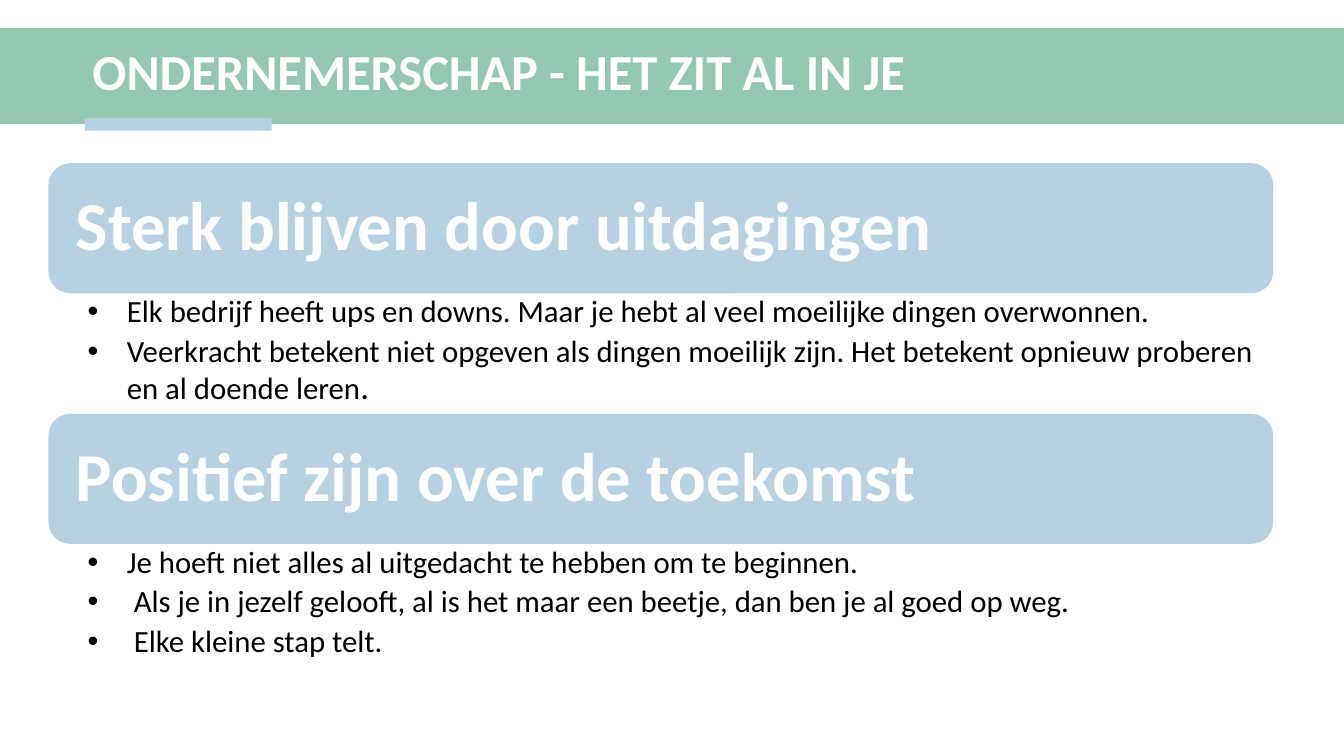
"""Build the slide on entrepreneurship with two headed bullet lists."""
from dataclasses import dataclass

from lxml.etree import SubElement
from pptx import Presentation
from pptx.dml.color import RGBColor
from pptx.enum.shapes import MSO_SHAPE
from pptx.enum.text import MSO_ANCHOR, PP_ALIGN
from pptx.oxml.ns import qn
from pptx.util import Pt

TITLE = "ONDERNEMERSCHAP - HET ZIT AL IN JE"
SECTIONS = [
    ("Sterk blijven door uitdagingen", [
        (28, ["Elk bedrijf heeft ups en downs. Maar je hebt al veel moeilijke dingen overwonnen."]),
        (28, ["Veerkracht betekent niet opgeven als dingen moeilijk zijn. "
              "Het betekent opnieuw proberen en al doende leren", "."]),
    ]),
    ("Positief zijn over de toekomst", [
        (28, ["Je hoeft niet alles al uitgedacht te hebben om te beginnen."]),
        (33, ["Als je in jezelf gelooft, al is het maar een beetje, dan ben je al goed op weg."]),
        (33, ["Elke kleine stap telt."]),
    ]),
]


@dataclass(frozen=True)
class Theme:
    """Colours and type sizes."""
    green: RGBColor = RGBColor(0x94, 0xC7, 0xB0)
    blue: RGBColor = RGBColor(0xB6, 0xD1, 0xE1)
    white: RGBColor = RGBColor(0xFF, 0xFF, 0xFF)
    black: RGBColor = RGBColor(0, 0, 0)
    font: str = "Calibri"
    title: int = 36
    heading: int = 49
    body: int = 22
    full_stop: int = 25


THEME = Theme()
CARD_LEFT, CARD_TOP, CARD_WIDTH, CARD_HEIGHT = 34.6, 116.6, 874.8, 92.9
SECTION_STEP, LIST_HEIGHT = 179, 86


def add_block(page, kind, area, color):
    block = page.shapes.add_shape(kind, *map(Pt, area))
    block.shadow.inherit = False
    block.fill.solid()
    block.fill.fore_color.rgb = color
    block.line.fill.background()
    return block


def set_up_frame(box, insets, anchor):
    frame = box.text_frame
    frame.word_wrap = True
    frame.vertical_anchor = anchor
    frame.margin_left, frame.margin_top, frame.margin_right, frame.margin_bottom = map(Pt, insets)
    return frame


def style_span(span, size, color, bold=False):
    span.font.name = THEME.font
    span.font.size = Pt(size)
    span.font.bold = bold
    span.font.color.rgb = color


def write_line(box, text, size, insets):
    frame = set_up_frame(box, insets, MSO_ANCHOR.MIDDLE)
    frame.text = text
    para = frame.paragraphs[0]
    para.alignment = PP_ALIGN.LEFT
    para.line_spacing = 0.9
    style_span(para.runs[0], size, THEME.white, bold=True)


def add_bullet(para, indent):
    properties = para._p.get_or_add_pPr()
    properties.set("marL", str(Pt(indent)))
    properties.set("indent", str(-Pt(indent)))
    SubElement(properties, qn("a:buFont"), typeface="Arial")
    SubElement(properties, qn("a:buChar"), char="•")


def add_list(page, top, items):
    box = page.shapes.add_textbox(Pt(CARD_LEFT), Pt(top), Pt(CARD_WIDTH), Pt(LIST_HEIGHT))
    frame = set_up_frame(box, (28, 2.2, 12.2, 2.2), MSO_ANCHOR.TOP)
    for index, (indent, parts) in enumerate(items):
        para = frame.add_paragraph() if index else frame.paragraphs[0]
        add_bullet(para, indent)
        para.line_spacing = 0.9
        para.space_after = Pt(THEME.body * 0.2)
        for part, size in zip(parts, (THEME.body, THEME.full_stop)):
            span = para.add_run()
            span.text = part
            style_span(span, size, THEME.black)


def main():
    deck = Presentation()
    deck.slide_width, deck.slide_height = Pt(960), Pt(540)
    page = deck.slides.add_slide(deck.slide_layouts[6])

    add_block(page, MSO_SHAPE.RECTANGLE, (0, 20, 960, 68.5), THEME.green)
    add_block(page, MSO_SHAPE.RECTANGLE, (60.6, 84.6, 133.4, 8.8), THEME.blue)
    title = page.shapes.add_textbox(Pt(59), Pt(24.5), Pt(859), Pt(57))
    write_line(title, TITLE, THEME.title, (7.2, 3.6, 7.2, 3.6))

    for index, (heading, items) in enumerate(SECTIONS):
        top = CARD_TOP + index * SECTION_STEP
        area = (CARD_LEFT, top, CARD_WIDTH, CARD_HEIGHT)
        card = add_block(page, MSO_SHAPE.ROUNDED_RECTANGLE, area, THEME.blue)
        write_line(card, heading, THEME.heading, (15, 14.4, 15, 14.4))
        add_list(page, top + CARD_HEIGHT, items)

    deck.save("out.pptx")


if __name__ == "__main__":
    main()
